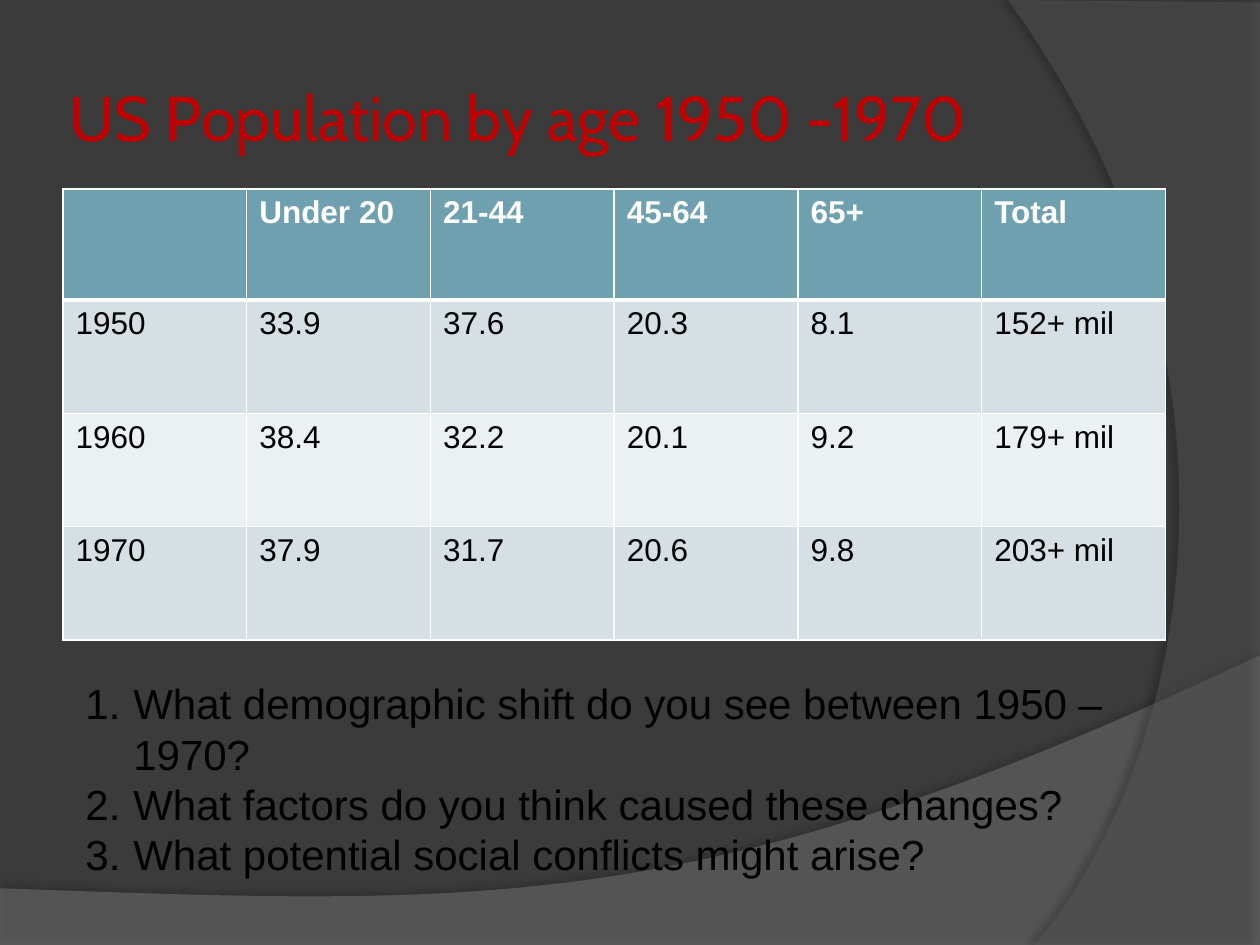
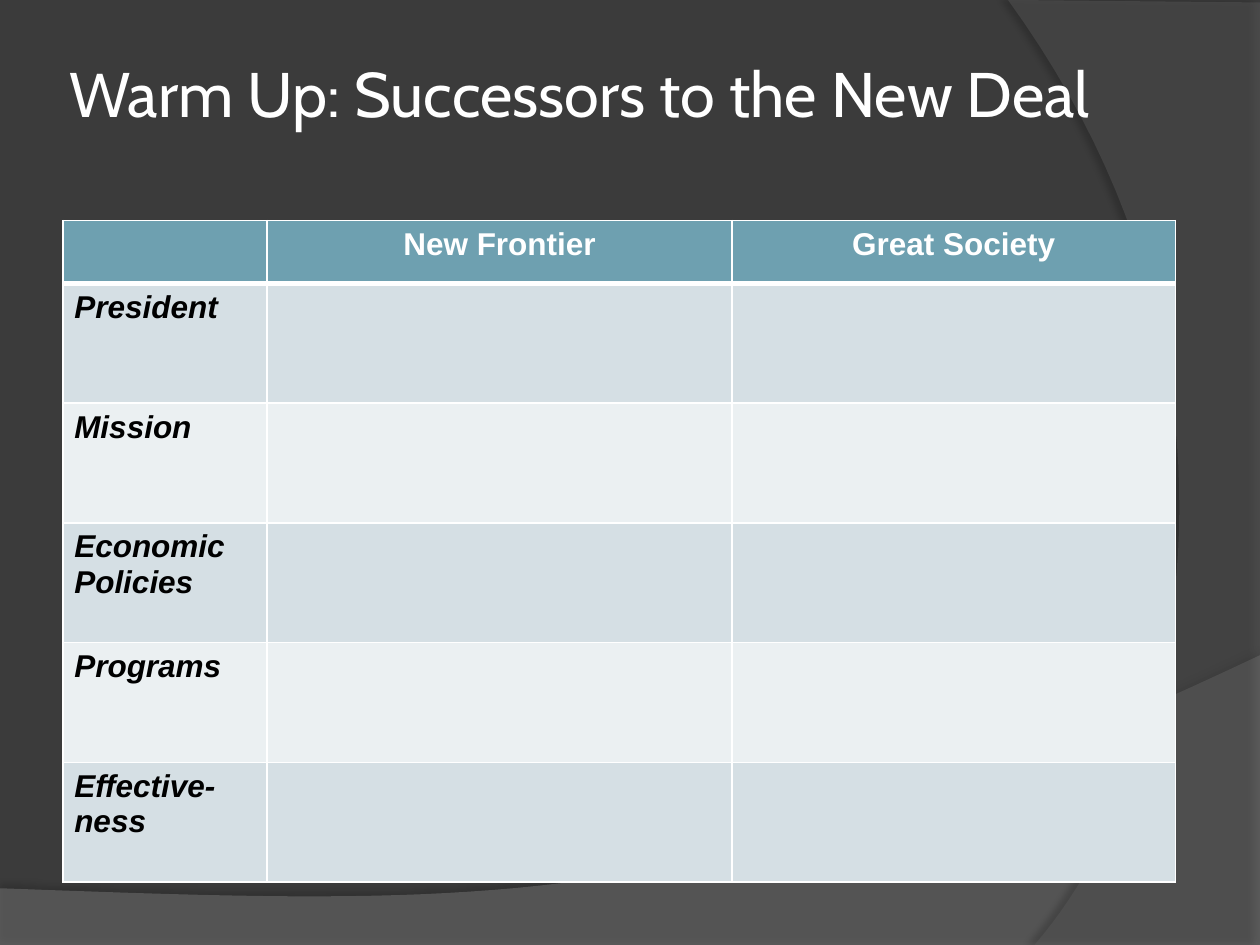
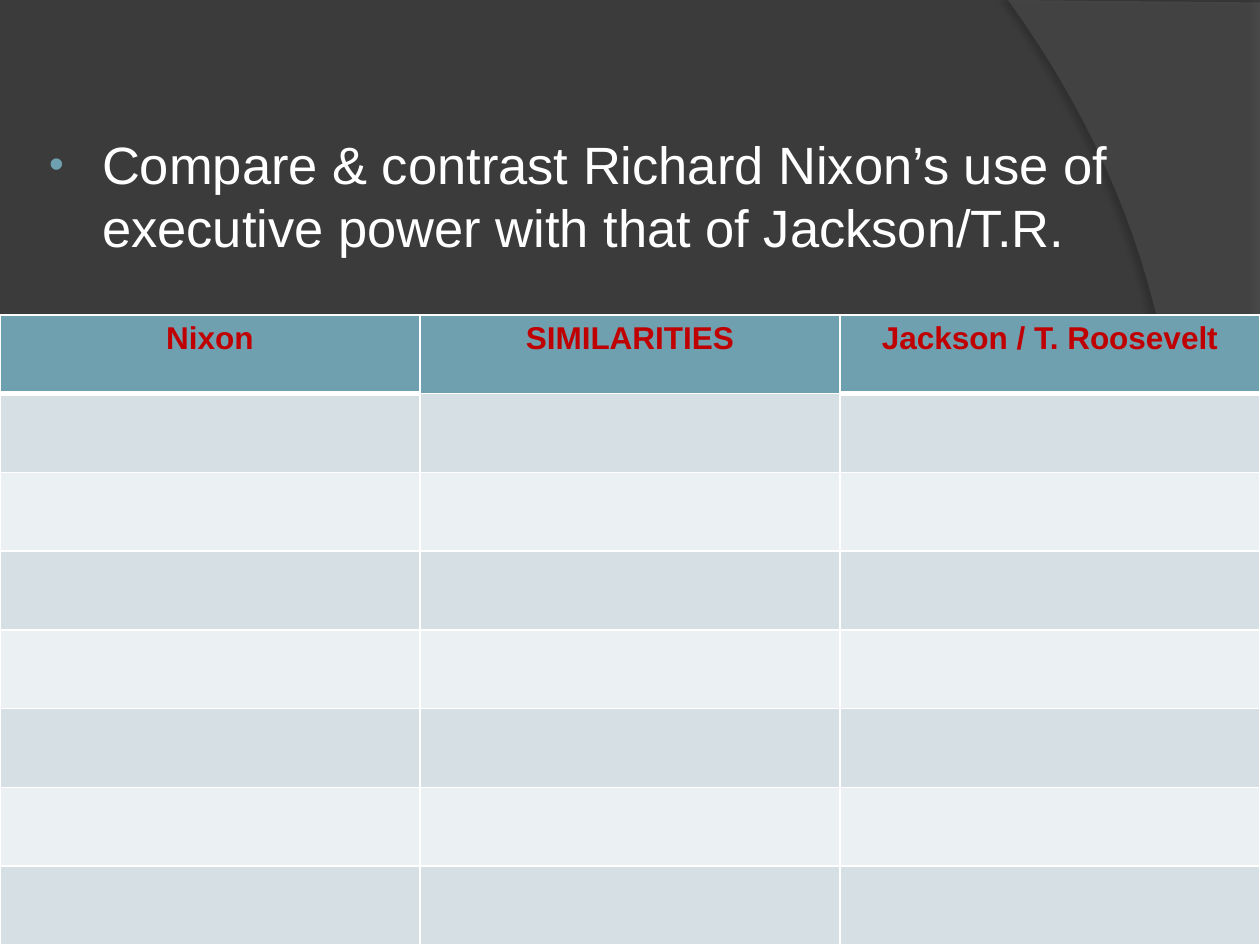
from lxml import etree
from pptx import Presentation
from pptx import util as u
from pptx.dml.color import RGBColor
from pptx.enum import text
from pptx.oxml import ns

COLORS = {
    "background": "3B3B3B",
    "floor": "7F7F7F",
    "side": "5E5E5E",
    "shadow": "000000",
    "header": "6EA0B0",
    "odd_row": "D5DFE4",
    "even_row": "EBF0F2",
    "white": "FFFFFF",
    "black": "000000",
    "red": "C00000",
}
TITLE_FONT = "Cabin"
BODY_FONT = "Arial"
TITLE_ONLY, TITLE_AND_BODY = 5, 1
THIN, THICK = 1, 3


def rgb(name):
    return RGBColor.from_string(COLORS[name])


def add_node(parent, tag, **attributes):
    node = etree.SubElement(parent, ns.qn(tag))
    for key, value in attributes.items():
        node.set(key, str(value))
    return node


def place(shape, left, top, width, height):
    shape.left, shape.top = u.Inches(left), u.Inches(top)
    shape.width, shape.height = u.Inches(width), u.Inches(height)


def format_text(frame, size, color, font=BODY_FONT, bold=False, italic=False,
                align=text.PP_ALIGN.LEFT):
    for para in frame.paragraphs:
        para.alignment = align
        for span in para.runs:
            span.font.size = u.Pt(size)
            span.font.name = font
            span.font.bold = bold
            span.font.italic = italic
            span.font.color.rgb = rgb(color)


def curve(start, control_1, control_2, end, steps=48):
    points = []
    for step in range(1, steps + 1):
        t = step / steps
        weights = ((1 - t) ** 3, 3 * t * (1 - t) ** 2, 3 * t * t * (1 - t), t ** 3)
        corners = (start, control_1, control_2, end)
        points.append(tuple(sum(w * corner[axis] for w, corner in zip(weights, corners))
                            for axis in (0, 1)))
    return points


def add_band(deck, page, points, color, opacity, shadow_opacity, distance, angle):
    points = [(u.Inches(x), u.Inches(y)) for x, y in points]
    builder = page.shapes.build_freeform(*points[0])
    builder.add_line_segments(points[1:], close=True)
    band = builder.convert_to_shape()
    band.fill.solid()
    band.fill.fore_color.rgb = rgb(color)
    band.line.fill.background()
    band.shadow.inherit = False
    fill_color = next(band.element.iter(ns.qn("a:srgbClr")))
    add_node(fill_color, "a:alpha", val=opacity * 1000)
    effects = next(band.element.iter(ns.qn("a:effectLst")))
    shadow = add_node(effects, "a:outerShdw", blurRad=u.Pt(4), dist=u.Pt(distance),
                      dir=angle * 60000, algn="ctr", rotWithShape=0)
    shadow_color = add_node(shadow, "a:srgbClr", val=COLORS["shadow"])
    add_node(shadow_color, "a:alpha", val=shadow_opacity * 1000)
    return band


def decorate_master(deck, page):
    master = deck.slide_master
    master.background.fill.solid()
    master.background.fill.fore_color.rgb = rgb("background")
    floor = [(0, 7.05), (0, 7.51), (10, 7.51), (10, 5.2)]
    floor += curve((10, 5.2), (5.59, 7.29), (3.91, 7.19), (0, 7.05))
    side = [(10, 0.02), (10, 7.5), (8.21, 7.5)]
    side += curve((8.21, 7.5), (9.35, 6.19), (10.18, 3), (8, 0))
    bands = [
        add_band(deck, page, floor, "floor", 45, 35, 3.5, 270),
        add_band(deck, page, side, "side", 40, 45, 4, 180),
    ]
    for position, band in enumerate(bands, start=2):
        master.shapes.element.insert(position, band.element)


def set_title(page, wording, color, *bounds):
    title = page.shapes.title
    place(title, *bounds)
    frame = title.text_frame
    frame.text = wording
    frame.auto_size = text.MSO_AUTO_SIZE.NONE
    frame.vertical_anchor = text.MSO_ANCHOR.MIDDLE
    frame.margin_left = frame.margin_right = u.Inches(0.05)
    frame.margin_top = frame.margin_bottom = u.Inches(0.05)
    format_text(frame, 36, color, TITLE_FONT)


def set_borders(cell, top, bottom):
    properties = cell._tc.get_or_add_tcPr()
    for side, width in (("L", THIN), ("R", THIN), ("T", top), ("B", bottom)):
        line = add_node(properties, f"a:ln{side}", w=u.Pt(width))
        fill = add_node(line, "a:solidFill")
        add_node(fill, "a:srgbClr", val=COLORS["white"])


def add_grid(page, left, top, widths, heights, rows, header_color="white",
             header_align=text.PP_ALIGN.LEFT, label_style=False, margin=0.1,
             thin_headers=()):
    frame = page.shapes.add_table(len(heights), len(widths), u.Inches(left), u.Inches(top),
                                  u.Inches(sum(widths)), u.Inches(sum(heights)))
    table = frame.table
    for column, width in zip(table.columns, widths):
        column.width = u.Inches(width)
    for row, height in zip(table.rows, heights):
        row.height = u.Inches(height)
    for r in range(len(heights)):
        for c in range(len(widths)):
            cell = table.cell(r, c)
            rule = THIN if c in thin_headers else THICK
            set_borders(cell, rule if r == 1 else THIN, rule if r == 0 else THIN)
            cell.fill.solid()
            band = "header" if r == 0 else "odd_row" if r % 2 else "even_row"
            cell.fill.fore_color.rgb = rgb(band)
            cell.margin_left = cell.margin_right = u.Inches(margin)
            if r < len(rows) and c < len(rows[r]) and rows[r][c]:
                cell.text_frame.text = rows[r][c]
                if r == 0:
                    format_text(cell.text_frame, 18, header_color, bold=True,
                                align=header_align)
                else:
                    format_text(cell.text_frame, 18, "black", bold=label_style,
                                italic=label_style)


def set_indent(para, margin, hanging):
    properties = para._p.get_or_add_pPr()
    properties.set("marL", str(u.Inches(margin)))
    properties.set("indent", str(-u.Inches(hanging)))
    return properties


def add_questions(page, questions, *bounds):
    box = page.shapes.add_textbox(0, 0, 0, 0)
    place(box, *bounds)
    frame = box.text_frame
    frame.word_wrap = True
    frame.text = "\n".join(questions)
    format_text(frame, 24, "black")
    for para in frame.paragraphs:
        add_node(set_indent(para, 0.38, 0.38), "a:buAutoNum", type="arabicPeriod")


def set_prompt(page, wording, *bounds):
    body = page.placeholders[1]
    place(body, *bounds)
    frame = body.text_frame
    frame.text = wording
    frame.auto_size = text.MSO_AUTO_SIZE.NONE
    format_text(frame, 30, "white")
    para = frame.paragraphs[0]
    para.space_before = u.Pt(6)
    properties = set_indent(para, 0.46, 0.42)
    bullet_color = add_node(properties, "a:buClr")
    add_node(bullet_color, "a:srgbClr", val=COLORS["header"])
    add_node(properties, "a:buSzPct", val=80000)
    add_node(properties, "a:buFont", typeface=BODY_FONT)
    add_node(properties, "a:buChar", char="•")


def build_population(page):
    set_title(page, "US Population by age 1950 -1970", "red", 0.5, 0.3, 8.17, 1.25)
    rows = [
        ["", "Under 20", "21-44", "45-64", "65+", "Total"],
        ["1950", "33.9", "37.6", "20.3", "8.1", "152+ mil"],
        ["1960", "38.4", "32.2", "20.1", "9.2", "179+ mil"],
        ["1970", "37.9", "31.7", "20.6", "9.8", "203+ mil"],
    ]
    add_grid(page, 0.5, 1.5, [8.75 / 6] * 6, [0.88] + [0.9] * 3, rows)
    questions = [
        "What demographic shift do you see between 1950 – 1970?",
        "What factors do you think caused these changes?",
        "What potential social conflicts might arise?",
    ]
    add_questions(page, questions, 0.58, 5.33, 8.58, 1.72)


def build_warm_up(page):
    set_title(page, "Warm Up: Successors to the New Deal", "white", 0.5, 0.3, 9, 0.87)
    labels = ["President", "Mission", "Economic Policies", "Programs", "Effective-ness"]
    rows = [["", "New Frontier", "Great Society"]] + [[label] for label in labels]
    add_grid(page, 0.5, 1.75, [1.62, 3.69, 3.52], [0.5] + [0.95] * 5, rows,
             header_align=text.PP_ALIGN.CENTER, label_style=True, margin=0.09)


def build_comparison(page):
    title = page.shapes.title.element
    title.getparent().remove(title)
    set_prompt(page, "Compare & contrast Richard Nixon’s use of executive power "
                     "with that of Jackson/T.R.", 0.25, 1, 9.75, 6.5)
    add_grid(page, 0, 2.5, [10 / 3] * 3, [5 / 8] * 8,
             [["Nixon", "SIMILARITIES", "Jackson / T. Roosevelt"]],
             header_color="red", header_align=text.PP_ALIGN.CENTER, thin_headers=(1,))


def main():
    deck = Presentation()
    deck.slide_width, deck.slide_height = u.Inches(10), u.Inches(7.5)
    layouts = (TITLE_ONLY, TITLE_ONLY, TITLE_AND_BODY)
    pages = [deck.slides.add_slide(deck.slide_layouts[index]) for index in layouts]
    decorate_master(deck, pages[0])
    for build, page in zip((build_population, build_warm_up, build_comparison), pages):
        build(page)
    deck.save("out.pptx")


if __name__ == "__main__":
    main()
